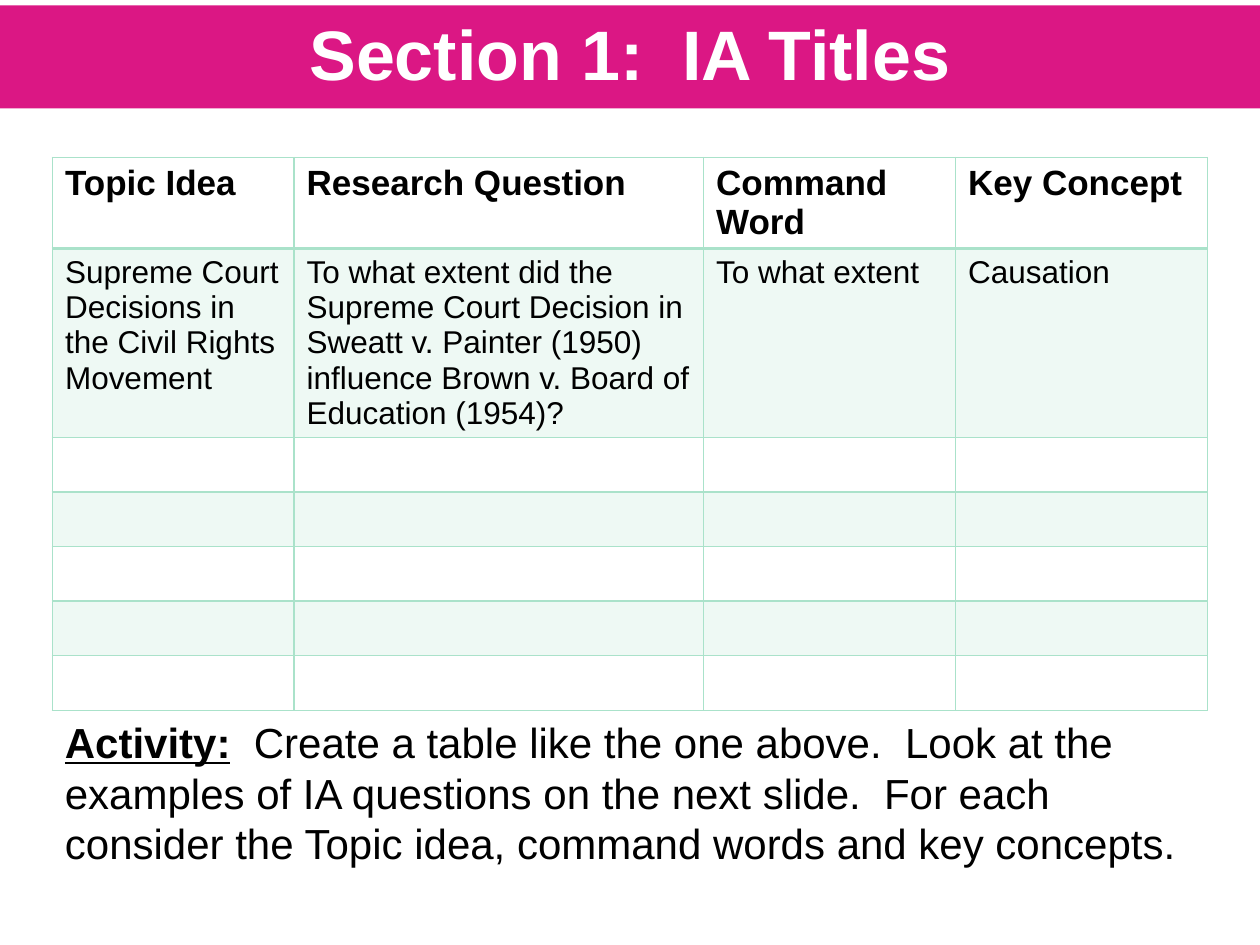
import pptx
import pptx.util
import pptx.dml.color
import pptx.enum.shapes
import pptx.enum.text
from lxml import etree

Pt = pptx.util.Pt
NS = "http://schemas.openxmlformats.org/drawingml/2006/main"
HUES = {"pink": "DB1784", "mint": "AAE2CA", "white": "FFFFFF", "black": "000000"}
HEADS = ["Topic Idea", "Research Question", "Command Word", "Key Concept"]
SAMPLE = [
    "Supreme Court Decisions in the Civil Rights Movement",
    "To what extent did the Supreme Court Decision in Sweatt v. Painter (1950) "
    "influence Brown v. Board of Education (1954)?",
    "To what extent",
    "Causation",
]
BLANKS = 5
WIDTHS = [138, 234, 144, 144]
HEIGHTS = [52, 108] + [31.2] * BLANKS
TASK = ("  Create a table like the one above.  Look at the examples of IA questions "
        "on the next slide.  For each consider the Topic idea, command words and key concepts.")


def hue(name):
    return pptx.dml.color.RGBColor.from_string(HUES[name])


def style(font, size, color="black", bold=False):
    font.name, font.size, font.bold = "Arial", Pt(size), bold
    font.color.rgb = hue(color)


def banner(slide, x, y, w, h):
    bar = slide.shapes.add_shape(pptx.enum.shapes.MSO_SHAPE.RECTANGLE,
                                 Pt(x), Pt(y), Pt(w), Pt(h))
    bar.shadow.inherit = False
    bar.fill.solid()
    bar.fill.fore_color.rgb = hue("pink")
    bar.line.fill.background()
    bar.text_frame.vertical_anchor = pptx.enum.text.MSO_ANCHOR.MIDDLE
    para = bar.text_frame.paragraphs[0]
    para.text = "Section 1:  IA Titles"
    para.alignment = pptx.enum.text.PP_ALIGN.CENTER
    para.line_spacing = 0.93
    style(para.font, 40, "white", True)


def tint(cell):
    """Fill a cell with mint at 20 % opacity."""
    cell.fill.solid()
    cell.fill.fore_color.rgb = hue("mint")
    color = cell._tc.tcPr.find(f".//{{{NS}}}srgbClr")
    etree.SubElement(color, f"{{{NS}}}alpha", val="20000")


def edge(cell, **widths):
    """Draw the cell's borders; widths are in points, by side."""
    props = cell._tc.get_or_add_tcPr()
    for spot, (side, width) in enumerate(widths.items()):
        line = etree.Element(f"{{{NS}}}ln{side}", w=str(Pt(width)))
        fill = etree.SubElement(line, f"{{{NS}}}solidFill")
        etree.SubElement(fill, f"{{{NS}}}srgbClr", val=HUES["mint"])
        props.insert(spot, line)


def chart_grid(slide, x, y):
    rows = [HEADS, SAMPLE] + [[""] * len(HEADS)] * BLANKS
    grid = slide.shapes.add_table(len(rows), len(HEADS), Pt(x), Pt(y),
                                  Pt(sum(WIDTHS)), Pt(sum(HEIGHTS))).table
    for col, width in zip(grid.columns, WIDTHS):
        col.width = Pt(width)
    for r, (row, height) in enumerate(zip(grid.rows, HEIGHTS)):
        row.height = Pt(height)
        for cell, text in zip(row.cells, rows[r]):
            cell.text = text
            style(cell.text_frame.paragraphs[0].font, 18 if r else 20, bold=r == 0)
            if r % 2:
                tint(cell)
            else:
                cell.fill.background()
            edge(cell, L=1, R=1, T=2 if r == 1 else 1, B=1 if r else 2)


def activity(slide, x, y, w, h):
    box = slide.shapes.add_textbox(Pt(x), Pt(y), Pt(w), Pt(h))
    frame = box.text_frame
    frame.word_wrap = True
    frame.auto_size = pptx.enum.text.MSO_AUTO_SIZE.SHAPE_TO_FIT_TEXT
    para = frame.paragraphs[0]
    style(para.font, 24)
    label = para.add_run()
    label.text = "Activity:"
    label.font.bold = label.font.underline = True
    para.add_run().text = TASK


def main():
    deck = pptx.Presentation()
    deck.slide_width, deck.slide_height = Pt(720), Pt(540)
    slide = deck.slides.add_slide(deck.slide_layouts[6])
    banner(slide, 0, 3, 720, 59)
    chart_grid(slide, 30, 90)
    activity(slide, 30, 406, 660, 94.5)
    deck.save("out.pptx")


if __name__ == "__main__":
    main()
